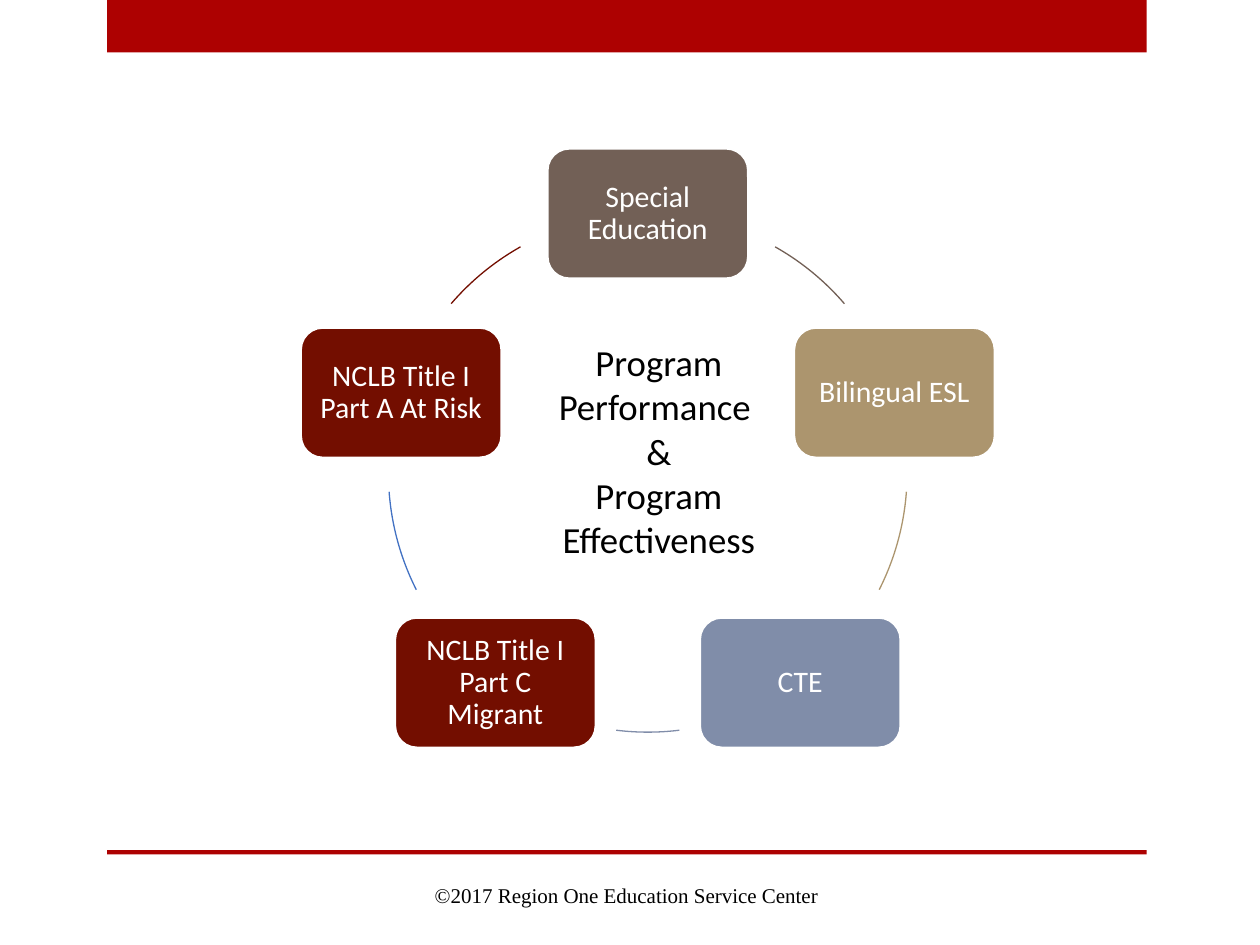
from math import cos, radians, sin

from pptx import Presentation
from pptx.dml.color import RGBColor
from pptx.enum.shapes import MSO_SHAPE as SHAPE
from pptx.enum.text import MSO_ANCHOR as ANCHOR, PP_ALIGN as ALIGN
from pptx.util import Pt

RED = RGBColor(0xAD, 0x01, 0x01)
MAROON = RGBColor(0x73, 0x0E, 0x00)
BROWN = RGBColor(0x72, 0x60, 0x56)
TAN = RGBColor(0xAC, 0x95, 0x6E)
SLATE = RGBColor(0x80, 0x8D, 0xA9)
BLUE = RGBColor(0x43, 0x72, 0xC3)
WHITE = RGBColor(0xFF, 0xFF, 0xFF)
BLACK = RGBColor(0x00, 0x00, 0x00)

PROGRAMS = [
    ("Special Education", BROWN, BROWN, (299.4, 319.3)),
    ("Bilingual ESL", TAN, TAN, (4.2, 26.8)),
    ("CTE", SLATE, SLATE, (83, 97)),
    ("NCLB Title I Part C Migrant", MAROON, BLUE, (153.2, 175.8)),
    ("NCLB Title I Part A At Risk", MAROON, MAROON, (220.7, 240.6)),
]
NODE_W, NODE_H = 114.4, 74


def add_shape(s, kind, left, top, width, height, fill=None, line=None, weight=1):
    sp = s.shapes.add_shape(kind, Pt(left), Pt(top), Pt(width), Pt(height))
    sp.shadow.inherit = False
    if fill is None:
        sp.fill.background()
    else:
        sp.fill.solid()
        sp.fill.fore_color.rgb = fill
    if line is None:
        sp.line.fill.background()
    else:
        sp.line.color.rgb = line
        sp.line.width = Pt(weight)
    return sp


def write(sp, lines, font, size, color, anchor, inset_x, inset_y, spacing=None):
    tf = sp.text_frame
    tf.word_wrap = True
    tf.vertical_anchor = anchor
    tf.margin_left = tf.margin_right = Pt(inset_x)
    tf.margin_top = tf.margin_bottom = Pt(inset_y)
    for i, line in enumerate(lines):
        p = tf.add_paragraph() if i else tf.paragraphs[0]
        p.alignment = ALIGN.CENTER
        p.line_spacing = spacing
        r = p.add_run()
        r.text = line
        r.font.name = font
        r.font.size = Pt(size)
        r.font.color.rgb = color


def add_text(s, left, top, width, height, *text):
    box = s.shapes.add_textbox(Pt(left), Pt(top), Pt(width), Pt(height))
    write(box, *text)


def add_bands(s, left, width):
    for top, height in ((0, 30), (485.8, 2.4)):
        add_shape(s, SHAPE.RECTANGLE, left, top, width, height, RED)


def add_cycle(s, left, top, size):
    radius = size / 2
    for i, (label, fill, line, sweep) in enumerate(PROGRAMS):
        angle = radians(i * 360 / len(PROGRAMS) - 90)
        x = left + radius * (1 + cos(angle)) - NODE_W / 2
        y = top + radius * (1 + sin(angle)) - NODE_H / 2
        node = add_shape(s, SHAPE.ROUNDED_RECTANGLE, x, y, NODE_W, NODE_H, fill, WHITE)
        node.adjustments[0] = 0.167
        write(node, [label], "Calibri", 17, WHITE, ANCHOR.MIDDLE, 5, 5, 0.9)
        arc = add_shape(s, SHAPE.ARC, left, top, size, size, line=line, weight=0.75)
        for k, degrees in enumerate(sweep):
            arc.adjustments[k] = degrees * 0.6


def add_center(s, left, top, width, height):
    lines = ["Program Performance ", "&", "Program Effectiveness"]
    add_text(s, left, top, width, height, lines, "Calibri", 21, BLACK, ANCHOR.TOP, 7.2, 3.6)


def add_footer(s, left, top, width, height):
    lines = ["©2017 Region One Education Service Center"]
    add_text(s, left, top, width, height, lines, "Times New Roman", 12, BLACK, ANCHOR.MIDDLE, 7.2, 3.6)


def main():
    prs = Presentation()
    prs.slide_width, prs.slide_height = Pt(720), Pt(540)
    s = prs.slides.add_slide(prs.slide_layouts[6])
    add_bands(s, 61.2, 594)
    add_cycle(s, 222, 122, 296.4)
    add_center(s, 284.4, 190.8, 184.3, 185)
    add_footer(s, 62.6, 497, 591, 29)
    prs.save("out.pptx")


if __name__ == "__main__":
    main()
